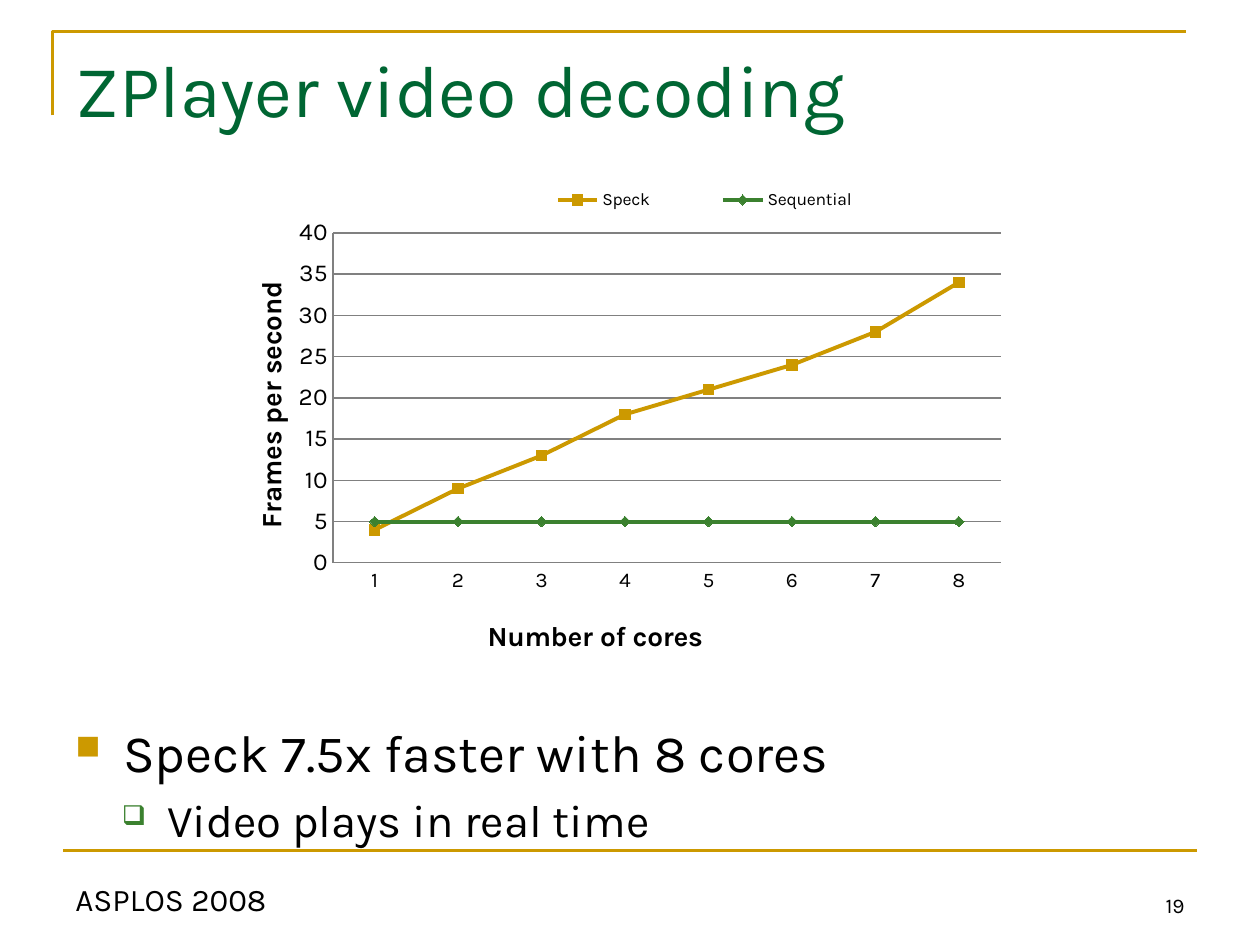
from lxml.etree import SubElement
from pptx import Presentation
from pptx.chart.data import CategoryChartData
from pptx.dml.color import RGBColor
from pptx.enum.chart import XL_CHART_TYPE as ChartType, XL_LEGEND_POSITION as LegendPosition
from pptx.enum.chart import XL_MARKER_STYLE as Marker, XL_TICK_MARK as Tick
from pptx.enum.shapes import MSO_CONNECTOR as Connector
from pptx.enum.text import MSO_ANCHOR as Anchor, PP_ALIGN as Align
from pptx.oxml.ns import qn
from pptx.util import Inches, Pt

COLORS = {"gold": "CC9900", "green": "3B812F", "title": "006633", "text": "000000", "grid": "808080"}


class SlideBuilder:
    """Draws styled elements on one slide, placed on a grid of 120 columns by 90 rows."""

    font_name = "Karla"

    def __init__(self, presentation):
        self.cell = presentation.slide_width // 120
        self.slide = presentation.slides.add_slide(presentation.slide_layouts[5])

    def grid(self, *cells):
        return [int(cell * self.cell) for cell in cells]

    def color(self, name):
        return RGBColor.from_string(COLORS[name])

    def style_font(self, font, size, color="text", bold=False):
        for key, value in {"name": self.font_name, "size": Pt(size), "bold": bold}.items():
            setattr(font, key, value)
        font.color.rgb = self.color(color)

    def style_line(self, line, color, width):
        line.color.rgb = self.color(color)
        line.width = Pt(width)

    def title(self, text, box):
        shape = self.slide.shapes.title
        for key, value in zip(("left", "top", "width", "height"), self.grid(*box)):
            setattr(shape, key, value)
        self.fill_text(shape.text_frame, [(text, 42, "title", None)], Anchor.TOP)

    def text(self, lines, box, anchor=Anchor.TOP, align=Align.LEFT):
        shape = self.slide.shapes.add_textbox(*self.grid(*box))
        self.fill_text(shape.text_frame, lines, anchor, align)

    def fill_text(self, frame, lines, anchor, align=Align.LEFT):
        frame.word_wrap = True
        frame.vertical_anchor = anchor
        for index, (text, size, color, bullet) in enumerate(lines):
            paragraph = frame.add_paragraph() if index else frame.paragraphs[0]
            paragraph.alignment = align
            run = paragraph.add_run()
            run.text = text
            self.style_font(run.font, size, color)
            if bullet:
                paragraph.level = index
                paragraph.space_before = Pt(size * 0.2)
                self.bullet(paragraph, *bullet)

    def bullet(self, paragraph, character, color, percent, margin, hanging):
        properties = paragraph._p.get_or_add_pPr()
        properties.set("marL", str(Inches(margin)))
        properties.set("indent", str(-Inches(hanging)))
        fill = SubElement(properties, qn("a:buClr"))
        SubElement(fill, qn("a:srgbClr"), val=COLORS[color])
        SubElement(properties, qn("a:buSzPct"), val=str(percent * 1000))
        SubElement(properties, qn("a:buChar"), char=character)

    def rule(self, start, end):
        line = self.slide.shapes.add_connector(Connector.STRAIGHT, *self.grid(*start, *end))
        self.style_line(line.line, "gold", 1.5)
        SubElement(line._element.spPr, qn("a:effectLst"))

    def corner(self, start, *points):
        builder = self.slide.shapes.build_freeform(*start, scale=self.cell)
        builder.add_line_segments(points, close=False)
        shape = builder.convert_to_shape()
        shape.shadow.inherit = False
        shape.fill.background()
        self.style_line(shape.line, "gold", 1.5)

    def chart_layout(self, element, index, inner=False, **shares):
        for old in element.findall(qn("c:layout")):
            element.remove(old)
        layout = SubElement(element, qn("c:layout"))
        element.insert(index, layout)
        manual = SubElement(layout, qn("c:manualLayout"))
        if inner:
            SubElement(manual, qn("c:layoutTarget"), val="inner")
        for key in shares:
            if key in "xy":
                SubElement(manual, qn(f"c:{key}Mode"), val="edge")
        for key, value in shares.items():
            SubElement(manual, qn(f"c:{key}"), val=str(value))

    def chart_title(self, title, text, **shares):
        title.text_frame.text = text
        self.style_font(title.text_frame.paragraphs[0].runs[0].font, 16, bold=True)
        self.chart_layout(title._element, 1, **shares)

    def line_chart(self, categories, series, titles, box):
        data = CategoryChartData()
        data.categories = categories
        for name, values, *_ in series:
            data.add_series(name, values)
        chart = self.slide.shapes.add_chart(ChartType.LINE_MARKERS, *self.grid(*box), data).chart
        self.style_font(chart.font, 10)
        chart.has_title = chart.has_legend = True
        self.chart_title(chart.chart_title, titles[0], x=0.35, y=0.91)
        self.chart_title(chart.value_axis.axis_title, titles[1], x=0.06, y=0.21)
        chart.legend.position = LegendPosition.RIGHT
        chart.legend.include_in_layout = False
        self.chart_layout(chart.legend._element, 1, x=0.36, y=0.01, w=0.53, h=0.07)
        plot_area = chart._chartSpace.chart.plotArea
        self.chart_layout(plot_area, 0, inner=True, x=0.165, y=0.114, w=0.826, h=0.69)
        for axis, size in ((chart.category_axis, 12), (chart.value_axis, 14)):
            axis.major_tick_mark = axis.minor_tick_mark = Tick.NONE
            self.style_font(axis.tick_labels.font, size)
            self.style_line(axis.format.line, "grid", 0.75)
        for key, value in {"minimum_scale": 0, "maximum_scale": 40, "major_unit": 5}.items():
            setattr(chart.value_axis, key, value)
        self.style_line(chart.value_axis.major_gridlines.format.line, "grid", 0.75)
        chart.plots[0].vary_by_categories = False
        for line, (_, _, color, marker) in zip(chart.plots[0].series, series):
            line.smooth = False
            self.style_line(line.format.line, color, 2.25)
            line.marker.style = marker
            line.marker.size = 6
            line.marker.format.fill.solid()
            line.marker.format.fill.fore_color.rgb = self.color(color)
            self.style_line(line.marker.format.line, color, 0.75)


def main():
    presentation = Presentation()
    presentation.slide_width, presentation.slide_height = Inches(10), Inches(7.5)
    slide = SlideBuilder(presentation)
    slide.corner((5, 11), (5, 3), (113, 3))
    slide.rule((6, 81), (114, 81))
    slide.title("ZPlayer video decoding", (6, 3.6, 108, 15))
    slide.text([
        ("Speck 7.5x faster with 8 cores", 30, "text", ("■", "gold", 65, 0.38, 0.38)),
        ("Video plays in real time", 26, "text", ("❑", "green", 60, 0.73, 0.36)),
    ], (6, 68, 108, 12.5))
    slide.text([("ASPLOS 2008", 18, "text", None)], (6, 82, 38, 6), Anchor.BOTTOM)
    slide.text([("19", 12, "text", None)], (86, 82, 28, 6), Anchor.BOTTOM, Align.RIGHT)
    slide.line_chart(
        [str(cores) for cores in range(1, 9)],
        [
            ("Speck", (4, 9, 13, 18, 21, 24, 28, 34), "gold", Marker.SQUARE),
            ("Sequential", (5,) * 8, "green", Marker.DIAMOND),
        ],
        ("Number of cores", "Frames per second"),
        (19, 17, 77, 46),
    )
    presentation.save("out.pptx")


if __name__ == "__main__":
    main()
